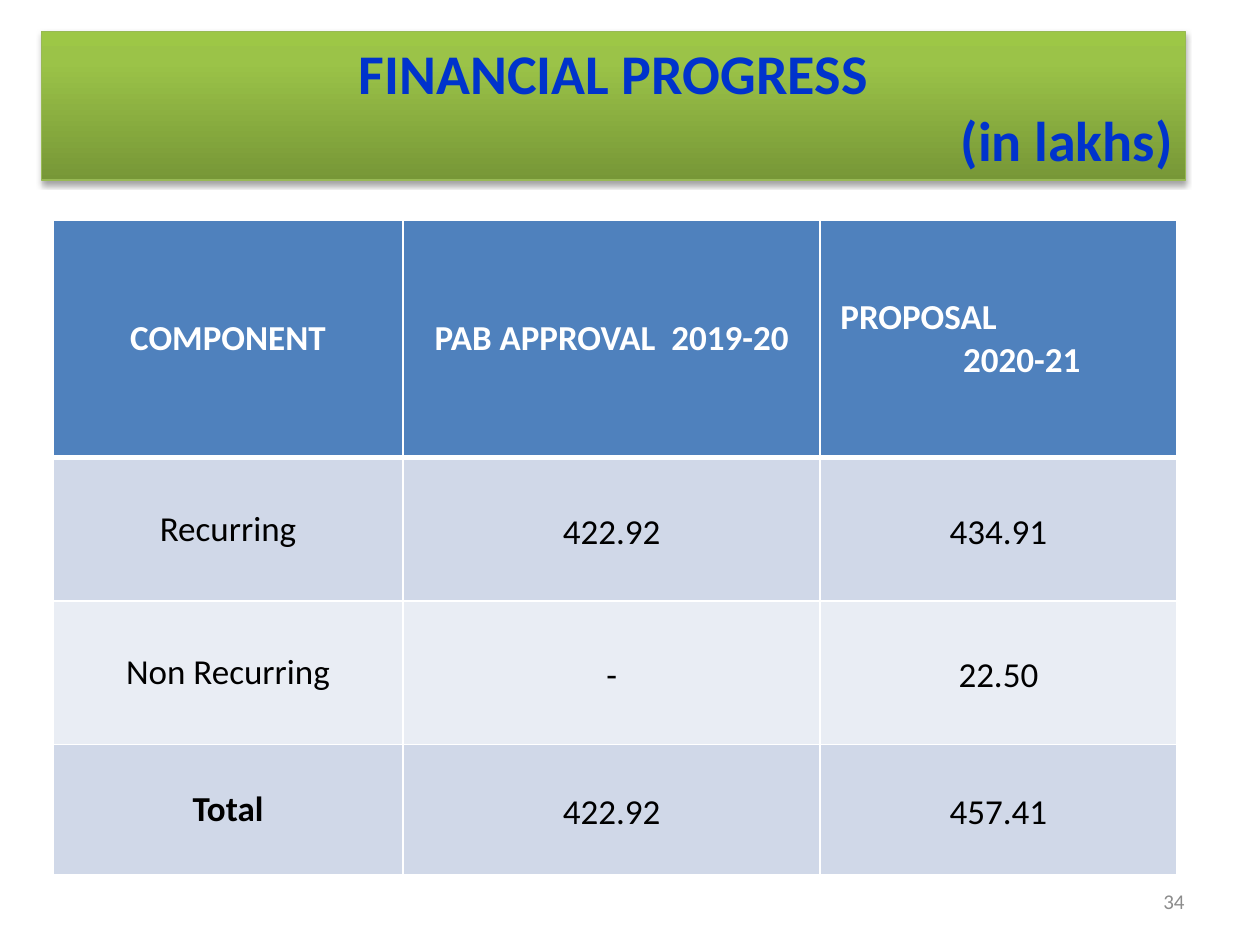
from dataclasses import dataclass

import lxml.etree
import pptx
import pptx.dml.color
import pptx.enum.text
import pptx.oxml
import pptx.oxml.ns
import pptx.util

Inches = pptx.util.Inches
Pt = pptx.util.Pt
ALIGN = pptx.enum.text.PP_ALIGN
MIDDLE = pptx.enum.text.MSO_ANCHOR.MIDDLE

FONT = "Calibri"
COLORS = {
    "title": "0033CC",
    "banner_line": "98B955",
    "banner_dark": "779737",
    "banner_mid": "9BC348",
    "banner_light": "9DC746",
    "header": "4F81BD",
    "band_dark": "D0D8E8",
    "band_light": "E9EDF4",
    "white": "FFFFFF",
    "black": "000000",
    "page": "8C8C8C",
}


@dataclass
class ComponentRow:
    name: str
    approval: str
    proposal: str
    height: float
    bold_name: bool = False


HEADER = ComponentRow("COMPONENT", "PAB APPROVAL  2019-20", "PROPOSAL\n2020-21", 1.88)
COMPONENTS = [
    ComponentRow("Recurring", "422.92", "434.91", 1.14),
    ComponentRow("Non Recurring", "-", "22.50", 1.14),
    ComponentRow("Total", "422.92", "457.41", 1.03, bold_name=True),
]
COLUMN_WIDTHS = [2.78, 3.31, 2.83]


def rgb(name: str) -> pptx.dml.color.RGBColor:
    return pptx.dml.color.RGBColor.from_string(COLORS[name])


def format_text(text_frame, size: float, color: str, bold: bool, align) -> None:
    for paragraph in text_frame.paragraphs:
        paragraph.alignment = align
        for run in paragraph.runs:
            run.font.name = FONT
            run.font.size = Pt(size)
            run.font.bold = bold
            run.font.color.rgb = rgb(color)


def add_banner_effects(banner) -> None:
    namespace = pptx.oxml.ns.nsdecls("a")
    stops = [(0, "banner_dark"), (80, "banner_mid"), (100, "banner_light")]
    stop_xml = "".join(
        f'<a:gs pos="{position * 1000}"><a:srgbClr val="{COLORS[name]}"/></a:gs>'
        for position, name in stops
    )
    gradient = pptx.oxml.parse_xml(
        f'<a:gradFill {namespace} rotWithShape="1"><a:gsLst>{stop_xml}</a:gsLst>'
        '<a:lin ang="16200000" scaled="0"/></a:gradFill>'
    )
    shadow = pptx.oxml.parse_xml(
        f'<a:effectLst {namespace}><a:outerShdw blurRad="{Pt(3.1)}" dist="{Pt(1.8)}" '
        f'dir="5400000" rotWithShape="0"><a:srgbClr val="{COLORS["black"]}">'
        '<a:alpha val="35000"/></a:srgbClr></a:outerShdw></a:effectLst>'
    )
    banner.line.color.rgb = rgb("banner_line")
    banner.line.width = Pt(0.75)
    outline = banner.line._get_or_add_ln()
    outline.addprevious(gradient)
    outline.addnext(shadow)


def add_title(slide) -> None:
    title = slide.shapes.title
    title.left, title.top = Inches(0.33), Inches(0.25)
    title.width, title.height = Inches(9.08), Inches(1.18)
    title.text_frame.text = "FINANCIAL PROGRESS\n(in lakhs)"
    title.text_frame.auto_size = pptx.enum.text.MSO_AUTO_SIZE.NONE
    title.text_frame.vertical_anchor = MIDDLE
    format_text(title.text_frame, 32, "title", True, ALIGN.CENTER)
    title.text_frame.paragraphs[1].alignment = ALIGN.RIGHT
    add_banner_effects(title)


def set_borders(cell, top: float, bottom: float) -> None:
    properties = cell._tc.get_or_add_tcPr()
    widths = {"lnL": 1, "lnR": 1, "lnT": top, "lnB": bottom}
    for index, (side, width) in enumerate(widths.items()):
        border = pptx.oxml.parse_xml(
            f'<a:{side} {pptx.oxml.ns.nsdecls("a")} w="{Pt(width)}"><a:solidFill>'
            f'<a:srgbClr val="{COLORS["white"]}"/></a:solidFill></a:{side}>'
        )
        properties.insert(index, border)


def fill_cell(cell, text: str, fill: str, color: str, bold: bool) -> None:
    cell.text_frame.text = text
    cell.vertical_anchor = MIDDLE
    cell.fill.solid()
    cell.fill.fore_color.rgb = rgb(fill)
    format_text(cell.text_frame, 20, color, bold, ALIGN.CENTER)


def space_amount(cell) -> None:
    cell.margin_left = cell.margin_right = Inches(0.07)
    cell.margin_top = cell.margin_bottom = 0
    amount = cell.text_frame.paragraphs[0]
    amount.line_spacing = 1.15
    amount.space_after = Pt(10)


def add_progress_table(slide) -> None:
    rows = [HEADER, *COMPONENTS]
    table = slide.shapes.add_table(
        len(rows), len(COLUMN_WIDTHS), Inches(0.42), Inches(1.75),
        Inches(sum(COLUMN_WIDTHS)), Inches(sum(row.height for row in rows)),
    ).table
    for column, width in zip(table.columns, COLUMN_WIDTHS):
        column.width = Inches(width)
    for row_index, row in enumerate(rows):
        table.rows[row_index].height = Inches(row.height)
        is_header = row is HEADER
        band = "band_dark" if row_index % 2 else "band_light"
        for column_index, text in enumerate([row.name, row.approval, row.proposal]):
            cell = table.cell(row_index, column_index)
            fill_cell(
                cell, text,
                "header" if is_header else band,
                "white" if is_header else "black",
                is_header or (row.bold_name and column_index == 0),
            )
            set_borders(cell, 3 if row_index == 1 else 1, 3 if is_header else 1)
            if not is_header and column_index:
                space_amount(cell)
    proposal, year = table.cell(0, 2).text_frame.paragraphs
    proposal.alignment = ALIGN.LEFT
    for paragraph, indent in [(proposal, 0.06), (year, 0.37)]:
        paragraph._p.get_or_add_pPr().set("marL", str(Inches(indent)))


def add_page_number(slide, number: int) -> None:
    page = slide.shapes.add_textbox(Inches(7.17), Inches(6.95), Inches(2.33), Inches(0.4))
    page.text_frame.word_wrap = True
    page.text_frame.vertical_anchor = MIDDLE
    page.text_frame.text = str(number)
    format_text(page.text_frame, 12, "page", False, ALIGN.RIGHT)


def main() -> None:
    presentation = pptx.Presentation()
    presentation.slide_width = Inches(10)
    presentation.slide_height = Inches(7.5)
    slide = presentation.slides.add_slide(presentation.slide_layouts[5])
    add_title(slide)
    add_page_number(slide, 34)
    add_progress_table(slide)
    presentation.save("out.pptx")


if __name__ == "__main__":
    main()
